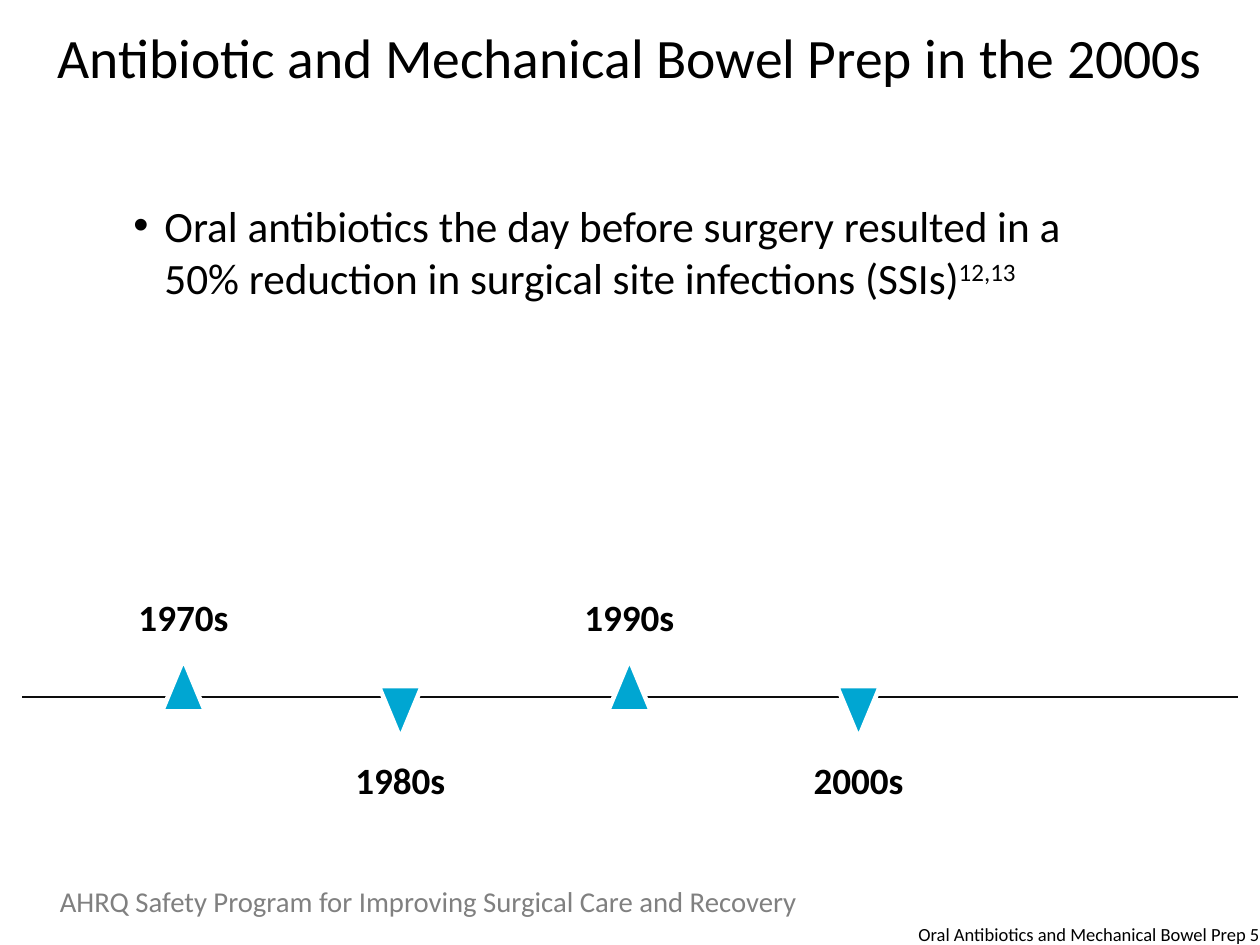
"""Build a slide with a decade timeline of antibiotic and mechanical bowel prep."""
import pptx
import pptx.util
import pptx.dml.color
import pptx.enum.shapes
import pptx.enum.text
import pptx.oxml.ns
import lxml.etree

Inches, Pt = pptx.util.Inches, pptx.util.Pt
PP_ALIGN = pptx.enum.text.PP_ALIGN
ANCHOR = pptx.enum.text.MSO_ANCHOR
qn = pptx.oxml.ns.qn
COLORS = {"text": "000000", "footer": "808080", "line": "0D0D0D",
          "marker": "00A6D2", "outline": "FFFFFF"}


def rgb(name):
    return pptx.dml.color.RGBColor.from_string(COLORS[name])


def add_text(box, text, size, color="text", align=PP_ALIGN.LEFT, bold=False,
             anchor=ANCHOR.TOP, insets=(0.1, 0.05)):
    sp = s.shapes.add_textbox(*[Inches(v) for v in box])
    tf = sp.text_frame
    tf.word_wrap = True
    tf.vertical_anchor = anchor
    tf.margin_left = tf.margin_right = Inches(insets[0])
    tf.margin_top = tf.margin_bottom = Inches(insets[1])
    p = tf.paragraphs[0]
    p.alignment = align
    r = p.add_run()
    r.text = text
    r.font.name = "Calibri"
    r.font.size = Pt(size)
    r.font.bold = bold
    r.font.color.rgb = rgb(color)
    return p


prs = pptx.Presentation()
prs.slide_width, prs.slide_height = Inches(11.33), Inches(8.5)
s = prs.slides.add_slide(prs.slide_layouts[6])

p = add_text((0, 0, 11.33, 1.09), "Antibiotic and Mechanical Bowel Prep in the 2000s",
             36, align=PP_ALIGN.CENTER, anchor=ANCHOR.MIDDLE)
p.line_spacing = 0.9

p = add_text((1.1, 1.74, 8.65, 2.19),
             "Oral antibiotics the day before surgery resulted in a 50% reduction "
             "in surgical site infections (SSIs)", 28)
pPr = p._p.get_or_add_pPr()
pPr.set("marL", str(Inches(0.28)))
pPr.set("indent", str(Inches(-0.28)))
lxml.etree.SubElement(pPr, qn("a:buFont")).set("typeface", "Arial")
lxml.etree.SubElement(pPr, qn("a:buChar")).set("char", "•")
r = p.add_run()
r.text = "12,13"
r.font.name = "Calibri"
r.font.size = Pt(28)
r.font.color.rgb = rgb("text")
r._r.get_or_add_rPr().set("baseline", "30000")

axis = s.shapes.add_connector(pptx.enum.shapes.MSO_CONNECTOR.STRAIGHT,
                              Inches(0.2), Inches(6.27), Inches(11.13), Inches(6.27))
axis.line.color.rgb = rgb("line")
axis.line.width = Pt(1)
lxml.etree.SubElement(axis._element.spPr, qn("a:effectLst"))

decades = [("1970s", 1.65), ("1980s", 3.6), ("1990s", 5.66), ("2000s", 7.72)]
for i, (decade, center) in enumerate(decades):
    below = i % 2 == 1
    sp = s.shapes.add_shape(pptx.enum.shapes.MSO_SHAPE.ISOSCELES_TRIANGLE,
                            Inches(center - 0.195), Inches(6.17 if below else 5.93),
                            Inches(0.39), Inches(0.47))
    sp.rotation = 180 if below else 0
    sp.shadow.inherit = False
    sp.fill.solid()
    sp.fill.fore_color.rgb = rgb("marker")
    sp.line.color.rgb = rgb("outline")
    sp.line.width = Pt(3)
    add_text((center - 0.6, 6.77 if below else 5.31, 1.2, 0.48), decade, 24,
             align=PP_ALIGN.CENTER, bold=True, insets=(0.07, 0.04))

add_text((0.44, 7.9, 6.96, 0.5),
         "AHRQ Safety Program for Improving Surgical Care and Recovery", 18.6, "footer")
add_text((7, 8.3, 4.33, 0.2), "Oral Antibiotics and Mechanical Bowel Prep 5", 12,
         align=PP_ALIGN.RIGHT, anchor=ANCHOR.MIDDLE, insets=(0, 0))

prs.save("out.pptx")
